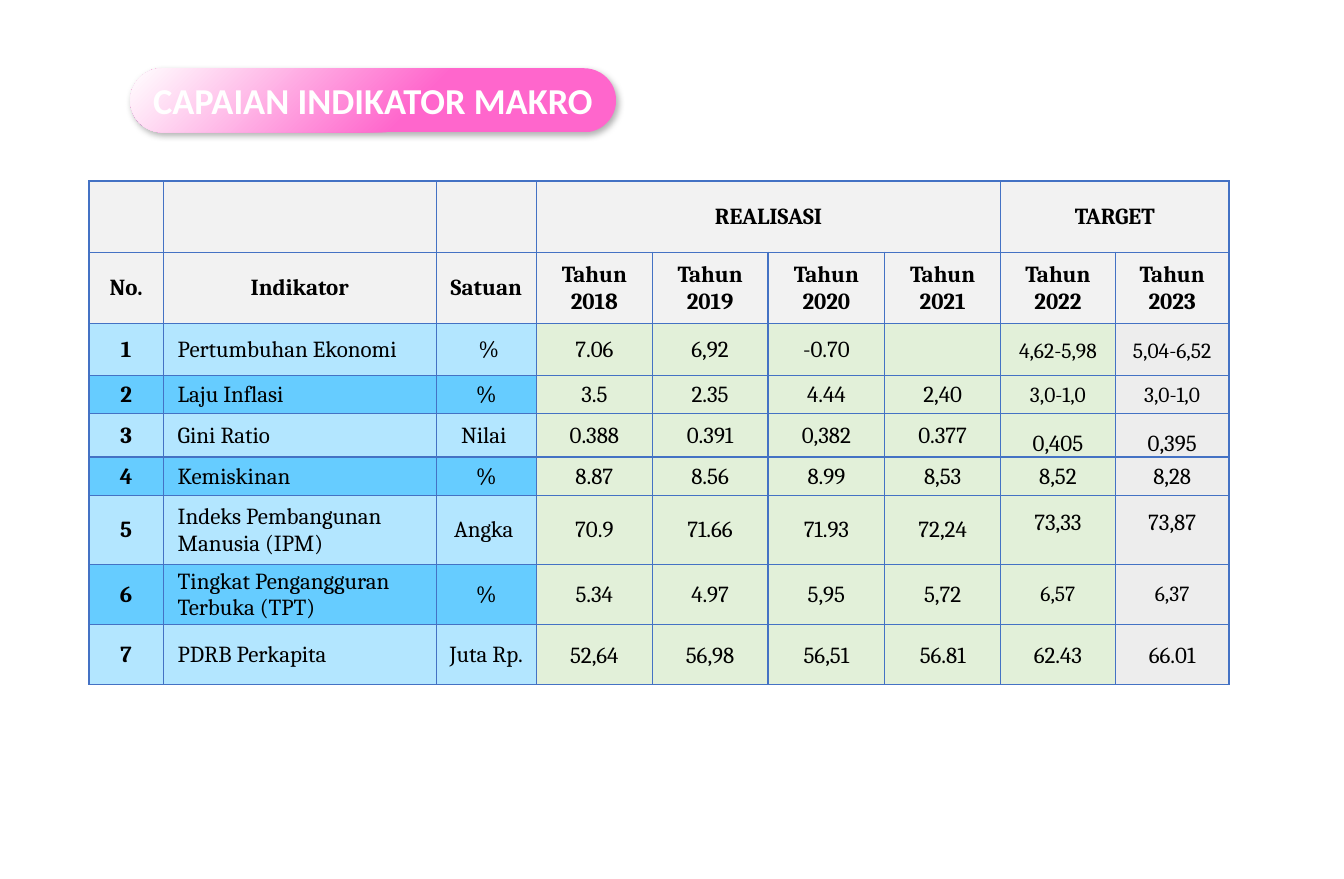
from lxml import etree
from pptx import Presentation
from pptx.dml.color import RGBColor
from pptx.enum.shapes import MSO_SHAPE
from pptx.enum.text import MSO_ANCHOR, PP_ALIGN
from pptx.oxml.ns import qn
from pptx.util import Emu, Pt

PILL = MSO_SHAPE.ROUNDED_RECTANGLE
MIDDLE, BOTTOM = MSO_ANCHOR.MIDDLE, MSO_ANCHOR.BOTTOM
CENTER, LEFT = PP_ALIGN.CENTER, PP_ALIGN.LEFT

PX = 9144
TITLE_ONLY = 5

BLACK = RGBColor(0x00, 0x00, 0x00)
WHITE = RGBColor(0xFF, 0xFF, 0xFF)
PINK = RGBColor(0xFF, 0x66, 0xCC)
BORDER = RGBColor(0x44, 0x72, 0xC4)
HEADER = RGBColor(0xF2, 0xF2, 0xF2)
LIGHT_BLUE = RGBColor(0xB3, 0xE6, 0xFF)
SKY_BLUE = RGBColor(0x66, 0xCC, 0xFF)
GREEN = RGBColor(0xE2, 0xF0, 0xD9)
GRAY = RGBColor(0xED, 0xED, 0xED)

TITLE_BOX = (126, 66, 470, 62)
TABLE_AT = (86, 175)
COLUMN_WIDTHS = (72, 264, 97, 112, 112, 113, 112, 111, 110)
ROW_HEIGHTS = (69, 69, 50, 37, 42, 37, 67, 58, 58)
GROUPS = (("REALISASI", 3, 6), ("TARGET", 7, 8))
HEADINGS = ["No.", "Indikator", "Satuan"] + [f"Tahun {year}" for year in range(2018, 2024)]
INDICATORS = (
    ("Pertumbuhan Ekonomi", " %", "7.06", "6,92", "-0.70", "", "4,62-5,98", "5,04-6,52"),
    ("Laju Inflasi", "%", "3.5", "2.35", "4.44", "2,40", "3,0-1,0", "3,0-1,0"),
    ("Gini Ratio", "Nilai ", "0.388", "0.391", "0,382", "0.377", "0,405", "0,395"),
    ("Kemiskinan", "%", "8.87", "8.56", "8.99", "8,53", "8,52", "8,28"),
    ("Indeks Pembangunan Manusia (IPM)", "Angka ", "70.9", "71.66", "71.93", "72,24", "73,33", "73,87"),
    ("Tingkat Pengangguran Terbuka (TPT)", "%", "5.34", "4.97", "5,95", "5,72", "6,57", "6,37"),
    ("PDRB Perkapita", "Juta Rp.", "52,64", "56,98", "56,51", "56.81", "62.43", "66.01"),
)

TITLE_FONT = {"name": "Calibri", "size": Pt(25.4), "bold": True}
CELL_FONT = {"name": "Cambria", "size": Pt(16), "bold": False}
BOLD_FONT = {**CELL_FONT, "bold": True}
SMALL_FONT = {**CELL_FONT, "size": Pt(15)}

TIGHT = (1, 1, 1, 0)
CELL_LAYOUT = {"margins": TIGHT, "anchor": MIDDLE, "spacing": None}
TARGET_LAYOUTS = {
    1: {"margins": (4, 0, 4, 0), "anchor": MIDDLE, "spacing": 1.15},
    3: {"margins": TIGHT, "anchor": BOTTOM, "spacing": None},
    5: {"margins": (1, 1, 1, 27), "anchor": BOTTOM, "spacing": None},
}
PER_CAPITA_LAYOUT = {"margins": (6, 6, 6, 6), "anchor": MIDDLE, "spacing": 1.15}
SMALL_TARGET_ROWS = (1, 2, 6)


def px(*lengths):
    """Turn pixel lengths into EMU."""
    return [Emu(length * PX) for length in lengths]


def apply(target, values):
    """Set every attribute in values on target."""
    for name, value in values.items():
        setattr(target, name, value)


def set_margins(holder, margins):
    """Set left, top, right and bottom text margins."""
    sides = ("margin_left", "margin_top", "margin_right", "margin_bottom")
    apply(holder, dict(zip(sides, px(*margins))))


def add_shadow(shape):
    """Give the shape a soft shadow at its lower right."""
    shape.shadow.inherit = False
    effects = shape._element.spPr.find(qn("a:effectLst"))
    shadow = etree.SubElement(effects, qn("a:outerShdw"), blurRad=str(Pt(4.5)),
                              dist=str(Pt(2.6)), dir=str(53 * 60000), algn="tl", rotWithShape="0")
    color = etree.SubElement(shadow, qn("a:srgbClr"), val=str(BLACK))
    etree.SubElement(color, qn("a:alpha"), val="30000")


def add_title(slide):
    """Place the title over a gradient pill."""
    title = slide.shapes.title
    pill = slide.shapes.add_shape(PILL, *px(*TITLE_BOX))
    title._element.addprevious(pill._element)
    pill.adjustments[0] = 0.5
    pill.line.fill.background()
    pill.fill.gradient()
    pill.fill.gradient_angle = 135
    for stop, position, color in zip(pill.fill.gradient_stops, (0.41, 1), (PINK, WHITE)):
        stop.position = position
        stop.color.rgb = color
    add_shadow(pill)

    apply(title, dict(zip(("left", "top", "width", "height"), px(*TITLE_BOX))))
    frame = title.text_frame
    frame.text = "CAPAIAN INDIKATOR MAKRO"
    frame.vertical_anchor = MIDDLE
    set_margins(frame, (0, 0, 0, 0))
    heading = frame.paragraphs[0]
    heading.alignment = CENTER
    apply(heading.font, TITLE_FONT)
    heading.font.color.rgb = WHITE


def style_cell(cell, fill):
    """Draw the cell borders and background."""
    properties = cell._tc.get_or_add_tcPr()
    for side in ("a:lnL", "a:lnR", "a:lnT", "a:lnB"):
        line = etree.SubElement(properties, qn(side), w=str(Pt(1)))
        solid = etree.SubElement(line, qn("a:solidFill"))
        etree.SubElement(solid, qn("a:srgbClr"), val=str(BORDER))
    cell.fill.solid()
    cell.fill.fore_color.rgb = fill


def write_cell(cell, text, font, layout=CELL_LAYOUT, align=CENTER):
    """Write formatted text into a cell."""
    cell.text = text
    cell.vertical_anchor = layout["anchor"]
    set_margins(cell, layout["margins"])
    paragraph = cell.text_frame.paragraphs[0]
    paragraph.alignment = align
    paragraph.line_spacing = layout["spacing"]
    if align == LEFT:
        paragraph._p.get_or_add_pPr().set("marL", str(13 * PX))
    apply(paragraph.font, font)
    paragraph.font.color.rgb = BLACK


def background(row, column):
    """Choose the fill of a cell by its place."""
    if row < 2:
        return HEADER
    if column < 3:
        return SKY_BLUE if row % 2 else LIGHT_BLUE
    return GRAY if column == 8 else GREEN


def write_indicator(table, number, values):
    """Fill one numbered indicator row."""
    row = number + 1
    write_cell(table.cell(row, 0), str(number), BOLD_FONT)
    for column, value in enumerate(values, start=1):
        is_target = column > 6
        font = SMALL_FONT if is_target and number in SMALL_TARGET_ROWS else CELL_FONT
        layout = TARGET_LAYOUTS.get(number, CELL_LAYOUT) if is_target else CELL_LAYOUT
        if number == len(INDICATORS) and column > 2:
            layout = PER_CAPITA_LAYOUT
        write_cell(table.cell(row, column), value, font, layout, LEFT if column == 1 else CENTER)


def add_indicator_table(slide):
    """Build the table of achievements and targets."""
    size = (sum(COLUMN_WIDTHS), sum(ROW_HEIGHTS))
    table = slide.shapes.add_table(len(ROW_HEIGHTS), len(COLUMN_WIDTHS),
                                   *px(*TABLE_AT, *size)).table
    apply(table, {"first_row": False, "horz_banding": False})
    for column, width in zip(table.columns, px(*COLUMN_WIDTHS)):
        column.width = width
    for row, height in zip(table.rows, px(*ROW_HEIGHTS)):
        row.height = height
    for row in range(len(ROW_HEIGHTS)):
        for column in range(len(COLUMN_WIDTHS)):
            style_cell(table.cell(row, column), background(row, column))
    for label, first, last in GROUPS:
        table.cell(0, first).merge(table.cell(0, last))
        write_cell(table.cell(0, first), label, BOLD_FONT)
    for column, heading in enumerate(HEADINGS):
        write_cell(table.cell(1, column), heading, BOLD_FONT)
    for number, values in enumerate(INDICATORS, start=1):
        write_indicator(table, number, values)


def main():
    """Build and save the slide."""
    presentation = Presentation()
    presentation.slide_width, presentation.slide_height = px(1300, 850)
    slide = presentation.slides.add_slide(presentation.slide_layouts[TITLE_ONLY])
    add_indicator_table(slide)
    add_title(slide)
    presentation.save("out.pptx")


if __name__ == "__main__":
    main()
